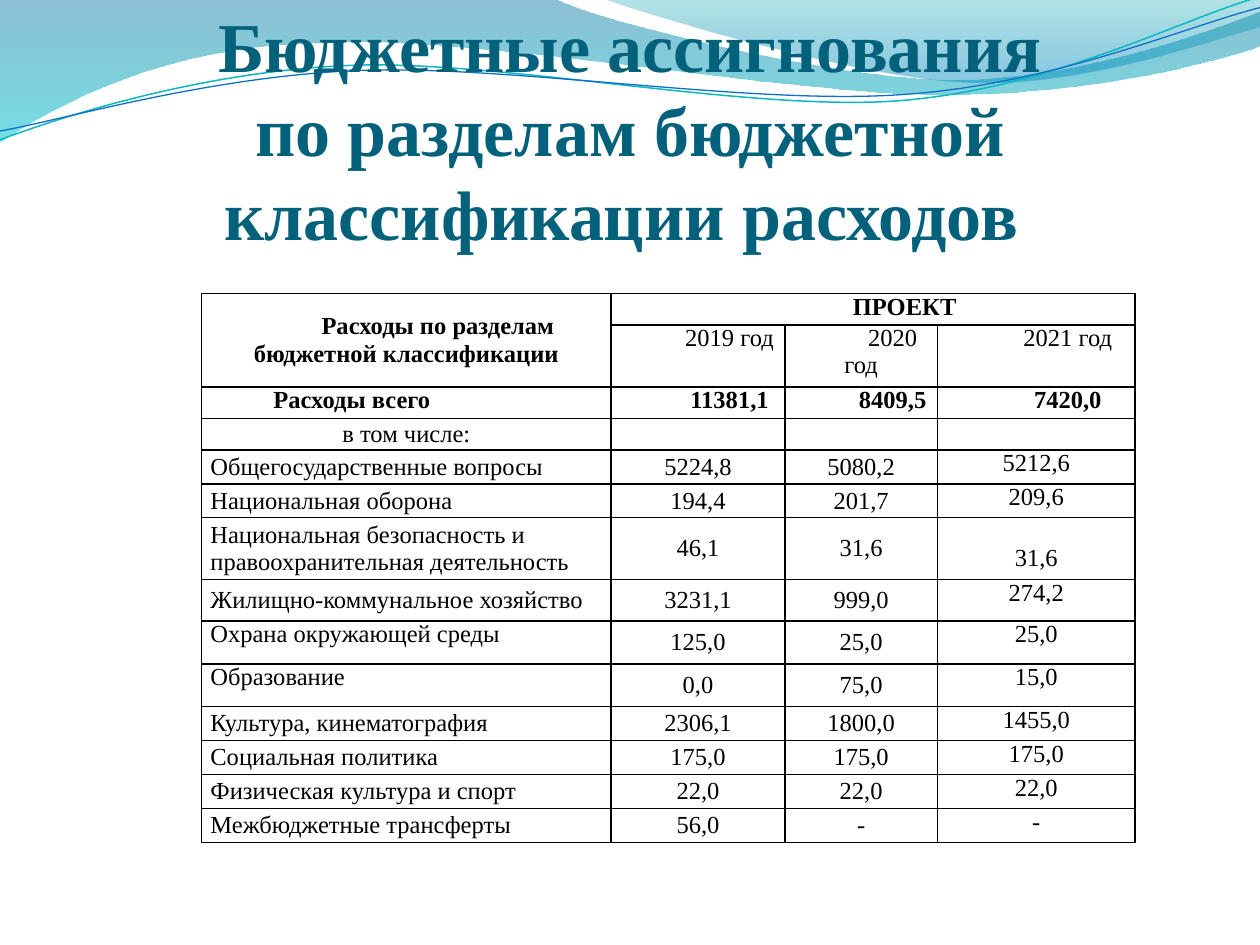
from math import cos, radians, sin

from lxml import etree
from pptx import Presentation
from pptx.dml.color import RGBColor
from pptx.enum.text import MSO_ANCHOR, PP_ALIGN
from pptx.oxml import parse_xml
from pptx.oxml.ns import nsdecls, qn
from pptx.util import Inches, Pt

LEFT, CENTER = PP_ALIGN.LEFT, PP_ALIGN.CENTER
TOP, MIDDLE, BOTTOM = MSO_ANCHOR.TOP, MSO_ANCHOR.MIDDLE, MSO_ANCHOR.BOTTOM

FONT = "Times New Roman"
BLACK = RGBColor(0x00, 0x00, 0x00)
TITLE_COLOR = RGBColor(0x04, 0x61, 0x7B)
TEAL = RGBColor(0x0A, 0xB8, 0xBF)
BLUE = RGBColor(0x0F, 0x6F, 0xC6)
DEEP_BLUE = RGBColor(0x00, 0x74, 0xA1)
CYAN = RGBColor(0x00, 0xC6, 0xCF)
DARK_TEAL = RGBColor(0x00, 0xA1, 0xA9)
SKY_BLUE = RGBColor(0x00, 0x8B, 0xBF)

# Each step holds one point (a line) or three (a Bezier curve).
# Gradient stops are position %, colour, opacity %.
BANDS = [
    ((-0.01, -0.01, 10.02, 1.14),
     [[(0, 0)], [(4.4, -0.01)], [(4.76, 0.17), (6.64, 0.63), (7.58, 0.63)],
      [(8.53, 0.63), (9.58, 0.26), (10, 0.09)], [(10.01, 0.36)],
      [(9.83, 0.44), (8.7, 0.76), (7.46, 0.75)],
      [(6.22, 0.75), (3.82, 0.28), (2.57, 0.34)],
      [(1.29, 0.36), (0.46, 0.83), (-0.01, 1.13)], [(0, 0)]],
     [(0, DEEP_BLUE, 45), (100, CYAN, 55)]),
    ((4.79, -0.01, 5.21, 0.7),
     [[(4.79, -0.01)], [(5.09, 0.11), (6.82, 0.62), (7.69, 0.65)],
      [(8.56, 0.69), (9.61, 0.32), (10, 0.21)], [(10, 0)], [(4.79, -0.01)]],
     [(0, DARK_TEAL, 30), (80, SKY_BLUE, 45)]),
]
WAVES = [
    ((-0.02, 0.22, 10.02, 0.71),
     [[(0, 1.11)], [(0.48, 0.93), (1.58, 0.57), (2.77, 0.52)],
      [(3.95, 0.47), (5.93, 0.89), (7.13, 0.8)],
      [(8.33, 0.71), (9.38, 0.15), (9.98, -0.02)]],
     TEAL, 0.85),
    ((-0.02, 0.3, 10.03, 0.58),
     [[(0, 1.04)], [(0.47, 0.96), (1.64, 0.61), (2.83, 0.56)],
      [(4.03, 0.51), (5.97, 0.84), (7.17, 0.75)],
      [(8.36, 0.67), (9.41, 0.21), (10, 0.06)]],
     BLUE, 0.75),
]
WAVE_ROTATION = -2.7

COLUMN_WIDTHS = [3.25, 1.38, 1.21, 1.57]
ROW_HEIGHTS = [0.25, 0.49, 0.25, 0.25, 0.27, 0.27, 0.49,
               0.33, 0.34, 0.34, 0.27, 0.27, 0.27, 0.27]
ROWS = [
    ["Расходы по разделам бюджетной классификации", "ПРОЕКТ", "", ""],
    ["", "2019 год", "2020 год", "2021 год"],
    ["Расходы всего", "11381,1", "8409,5", "7420,0"],
    ["в том числе:", "", "", ""],
    ["Общегосударственные вопросы", "5224,8", "5080,2", "5212,6"],
    ["Национальная оборона", "194,4", "201,7", "209,6"],
    ["Национальная безопасность и правоохранительная деятельность",
     "46,1", "31,6", "31,6"],
    ["Жилищно-коммунальное хозяйство", "3231,1", "999,0", "274,2"],
    ["Охрана окружающей среды", "125,0", "25,0", "25,0"],
    ["Образование", "0,0", "75,0", "15,0"],
    ["Культура, кинематография", "2306,1", "1800,0", "1455,0"],
    ["Социальная политика", "175,0", "175,0", "175,0"],
    ["Физическая культура и спорт", "22,0", "22,0", "22,0"],
    ["Межбюджетные трансферты", "56,0", "-", "-"],
]
TOTAL_ROW, SUBHEAD_ROW, SECURITY_ROW = 2, 3, 6
TOP_LABEL_ROWS = (8, 9)
BOLD_ROWS = (0, TOTAL_ROW)


def set_attributes(target, values):
    for name, value in values.items():
        setattr(target, name, value)


def add_outline(slide, box, steps, close, rotation=0):
    """Draw the steps, given in slide inches, as a shape that fills the box."""
    left, top, width, height = box
    middle_x, middle_y = left + width / 2, top + height / 2
    cosine, sine = cos(radians(-rotation)), sin(radians(-rotation))

    def local(point):
        x, y = point[0] - middle_x, point[1] - middle_y
        return (Inches(x * cosine - y * sine + width / 2),
                Inches(x * sine + y * cosine + height / 2))

    local_steps = [[local(point) for point in step] for step in steps]
    builder = slide.shapes.build_freeform(*local_steps[0][0])
    builder.add_line_segments([step[-1] for step in local_steps[1:]], close=close)
    shape = builder.convert_to_shape()
    set_attributes(shape, {
        "left": Inches(left), "top": Inches(top), "width": Inches(width),
        "height": Inches(height), "rotation": rotation})
    shape.shadow.inherit = False

    outline = next(shape._element.iter(qn("a:path")))
    outline.set("w", str(Inches(width)))
    outline.set("h", str(Inches(height)))
    for segment, step in zip(list(outline), local_steps):
        if len(step) == 3:
            segment_tag = "a:cubicBezTo"
        else:
            segment_tag = segment.tag.replace(f"{{{segment.nsmap['a']}}}", "a:")
        curve = etree.Element(qn(segment_tag))
        for x, y in step:
            etree.SubElement(curve, qn("a:pt"), x=str(x), y=str(y))
        outline.replace(segment, curve)
    return shape


def fill_vertical_gradient(shape, stops):
    stop_xml = "".join(
        f'<a:gs pos="{position * 1000}"><a:srgbClr val="{color}">'
        f'<a:alpha val="{opacity * 1000}"/></a:srgbClr></a:gs>'
        for position, color, opacity in stops)
    gradient = parse_xml(
        f'<a:gradFill {nsdecls("a")} rotWithShape="1"><a:gsLst>{stop_xml}</a:gsLst>'
        '<a:lin ang="5400000" scaled="0"/></a:gradFill>')
    shape._element.spPr.find(qn("a:custGeom")).addnext(gradient)


def add_header_waves(slide):
    for box, steps, stops in BANDS:
        band = add_outline(slide, box, steps, True)
        fill_vertical_gradient(band, stops)
        band.line.fill.background()
    for box, steps, color, width in WAVES:
        wave = add_outline(slide, box, steps, False, WAVE_ROTATION)
        wave.fill.background()
        wave.line.color.rgb = color
        wave.line.width = Pt(width)


def write_text(paragraph, text, size, color, bold):
    paragraph.text = text
    for run in paragraph.runs:
        set_attributes(run.font, {"name": FONT, "size": Pt(size), "bold": bold})
        run.font.color.rgb = color


def add_title(slide, left, top, width, height):
    box = slide.shapes.add_textbox(Inches(left), Inches(top), Inches(width), Inches(height))
    set_attributes(box.text_frame, {
        "word_wrap": True, "vertical_anchor": BOTTOM, "margin_left": 0,
        "margin_right": 0, "margin_top": Inches(0.05), "margin_bottom": 0})
    paragraph = box.text_frame.paragraphs[0]
    paragraph.alignment = CENTER
    write_text(paragraph, "Бюджетные ассигнования\vпо разделам бюджетной "
               "классификации расходов ", 40, TITLE_COLOR, True)


def add_borders(cell):
    properties = cell._tc.get_or_add_tcPr()
    for index, side in enumerate(("lnL", "lnR", "lnT", "lnB")):
        line = etree.Element(qn(f"a:{side}"), w=str(Pt(1)))
        fill = etree.SubElement(line, qn("a:solidFill"))
        etree.SubElement(fill, qn("a:srgbClr"), val=str(BLACK))
        properties.insert(index, line)


def format_cell(cell, row, column, text):
    in_header = row <= TOTAL_ROW
    at_top = (in_header and (row, column) != (0, 0)) or column == 3 or (
        column == 0 and row in TOP_LABEL_ROWS)
    is_left = column == 0 and row not in (0, SUBHEAD_ROW)
    lowered = column == 3 and row == SECURITY_ROW
    add_borders(cell)
    cell.fill.background()
    set_attributes(cell, {
        "margin_left": Inches(0.07), "margin_right": Inches(0.07),
        "margin_top": Inches(0.21 if lowered else 0), "margin_bottom": 0,
        "vertical_anchor": TOP if at_top else MIDDLE})
    paragraph = cell.text_frame.paragraphs[0]
    paragraph.alignment = LEFT if is_left else CENTER
    if in_header:
        paragraph._p.get_or_add_pPr().set("indent", str(Inches(0.5)))
    if text:
        write_text(paragraph, text, 14, BLACK, row in BOLD_ROWS)
    else:
        paragraph._p.get_or_add_endParaRPr().set("sz", "1400")


def add_budget_table(slide, left, top):
    frame = slide.shapes.add_table(
        len(ROWS), len(COLUMN_WIDTHS), Inches(left), Inches(top),
        Inches(sum(COLUMN_WIDTHS)), Inches(sum(ROW_HEIGHTS)))
    table = frame.table
    set_attributes(table, {"first_row": False, "horz_banding": False})
    for column, width in zip(table.columns, COLUMN_WIDTHS):
        column.width = Inches(width)
    for row, height in zip(table.rows, ROW_HEIGHTS):
        row.height = Inches(height)
    for row, texts in enumerate(ROWS):
        for column, text in enumerate(texts):
            format_cell(table.cell(row, column), row, column, text)
    table.cell(0, 0).merge(table.cell(1, 0))
    table.cell(0, 1).merge(table.cell(0, 3))


def main():
    presentation = Presentation()
    set_attributes(presentation, {"slide_width": Inches(10), "slide_height": Inches(7.5)})
    slide = presentation.slides.add_slide(presentation.slide_layouts[6])
    add_header_waves(slide)
    add_title(slide, 0.5, 0.77, 9, 1.25)
    add_budget_table(slide, 1.6, 2.33)
    presentation.save("out.pptx")


if __name__ == "__main__":
    main()
